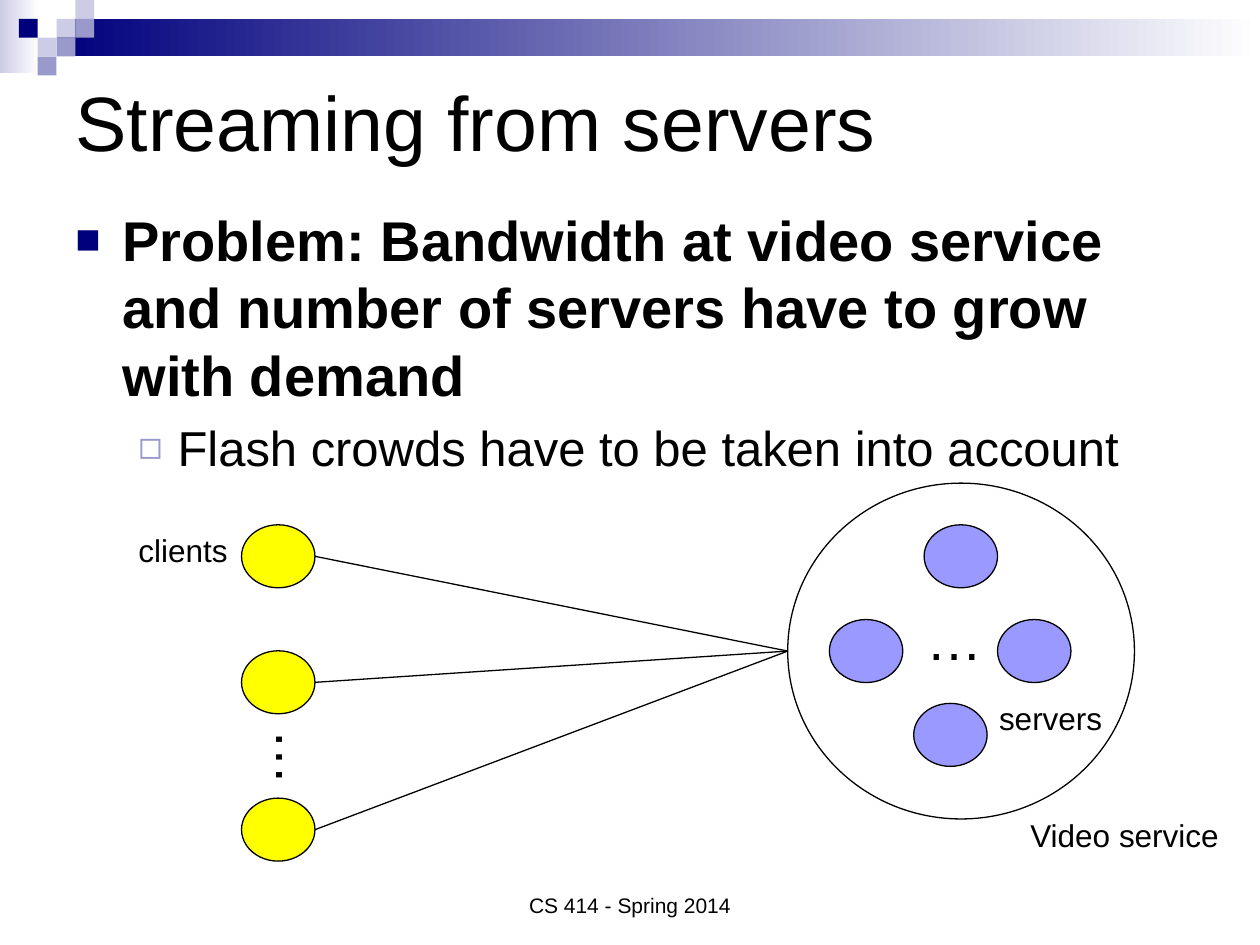
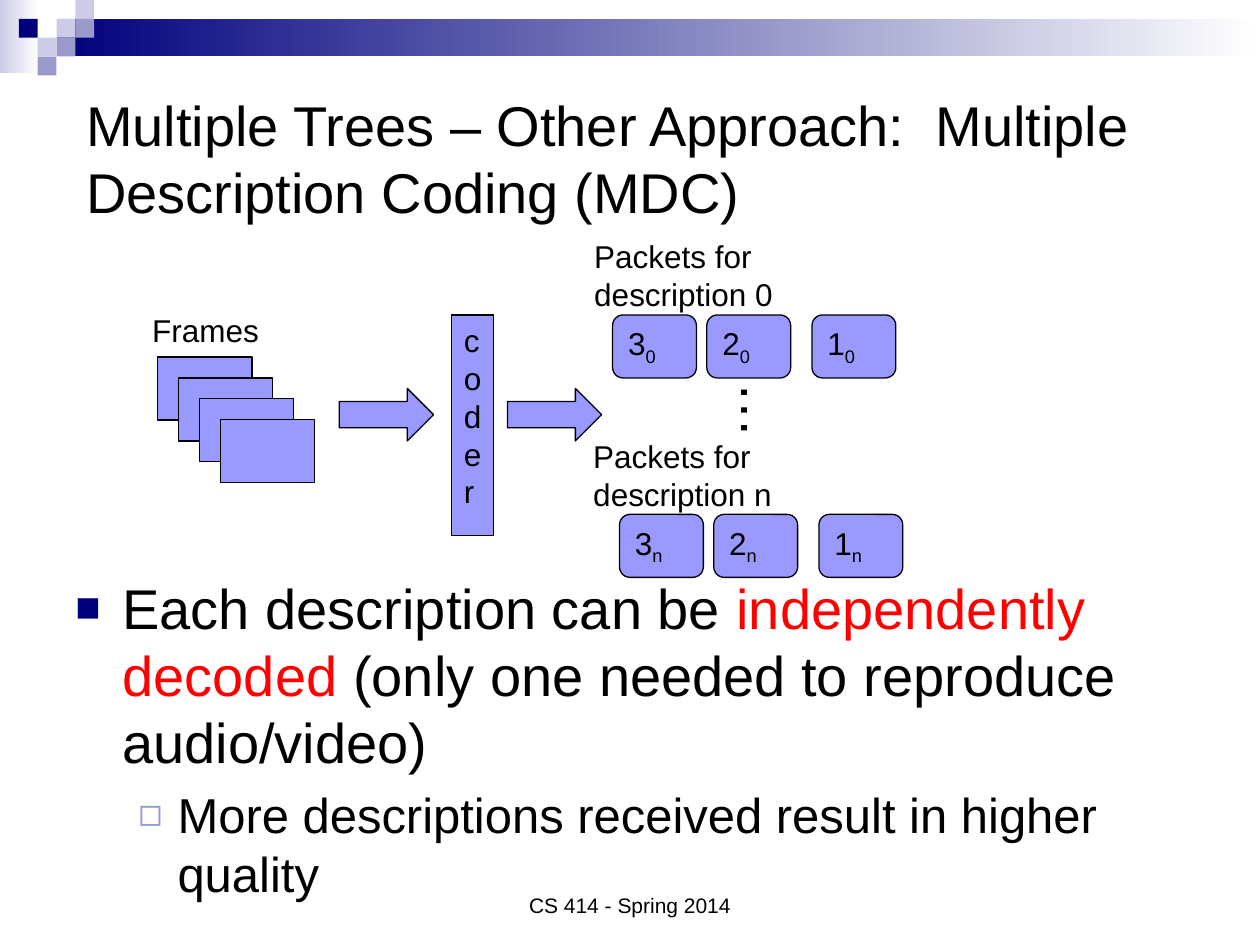
"""Build two lecture slides on video streaming and multiple description coding."""
from dataclasses import dataclass

from lxml import etree
from pptx import Presentation
from pptx.dml.color import RGBColor
from pptx.enum.shapes import MSO_CONNECTOR, MSO_SHAPE
from pptx.enum.text import MSO_ANCHOR, MSO_AUTO_SIZE, PP_ALIGN
from pptx.oxml.ns import qn
from pptx.util import Cm, Pt

RECT, ROUNDED = MSO_SHAPE.RECTANGLE, MSO_SHAPE.ROUNDED_RECTANGLE
OVAL, ARROW = MSO_SHAPE.OVAL, MSO_SHAPE.RIGHT_ARROW
STRAIGHT = MSO_CONNECTOR.STRAIGHT
TOP, MIDDLE, BOTTOM = MSO_ANCHOR.TOP, MSO_ANCHOR.MIDDLE, MSO_ANCHOR.BOTTOM
LEFT, CENTER = PP_ALIGN.LEFT, PP_ALIGN.CENTER
FIXED_SIZE = MSO_AUTO_SIZE.NONE

BLACK = RGBColor(0x00, 0x00, 0x00)
WHITE = RGBColor(0xFF, 0xFF, 0xFF)
RED = RGBColor(0xFF, 0x00, 0x00)
YELLOW = RGBColor(0xFF, 0xFF, 0x00)
NAVY = RGBColor(0x00, 0x00, 0x7D)
LAVENDER = RGBColor(0xCC, 0xCC, 0xE6)
VIOLET = RGBColor(0x99, 0x99, 0xCC)
PERIWINKLE = RGBColor(0x99, 0x99, 0xFF)

FONT = "Arial"
FOOTER = "CS 414 - Spring 2014"
TILE = 0.38
NODE_WIDTH, NODE_HEIGHT = 1.48, 1.27
LABEL_HEIGHT = 1.02


@dataclass(frozen=True)
class Box:
    """A rectangle in centimetres."""
    left: float
    top: float
    width: float
    height: float

    def lengths(self) -> tuple:
        """Return the four lengths for python-pptx."""
        return Cm(self.left), Cm(self.top), Cm(self.width), Cm(self.height)


@dataclass(frozen=True)
class Span:
    """A stretch of text with one format."""
    text: str
    color: RGBColor = BLACK
    bold: bool = False
    subscript: bool = False


@dataclass(frozen=True)
class BulletLevel:
    """The look of one outline level."""
    size: float
    margin: float
    hanging: float
    mark: str
    color: RGBColor
    percent: int
    space_before: float


@dataclass(frozen=True)
class Tile:
    """One square of the corner mosaic, by column and row."""
    column: int
    row: int
    color: RGBColor


@dataclass(frozen=True)
class PacketRow:
    """The packets that carry one description."""
    description: str
    left: float
    top: float
    label_left: float


PROBLEM_LEVEL = BulletLevel(32, 0.95, 0.95, "■", NAVY, 75, 0)
DETAIL_LEVEL = BulletLevel(28, 2.06, 0.79, "◻", VIOLET, 80, 5.6)
MOSAIC = (
    Tile(3, 1, LAVENDER), Tile(4, 0, LAVENDER), Tile(4, 1, VIOLET),
    Tile(2, 2, LAVENDER), Tile(1, 1, NAVY), Tile(3, 2, VIOLET),
    Tile(2, 3, VIOLET),
)
PACKET_ROWS = (
    PacketRow("0", 12.35, 6.35, 11.73),
    PacketRow("n", 12.49, 10.37, 11.71),
)
PACKET_OFFSETS = {"3": 0, "2": 1.9, "1": 4.02}
SERVER_CORNERS = ((18.63, 10.58), (20.11, 12.49), (18.42, 14.18), (16.72, 12.49))
CLIENT_LEFT, CLIENT_TOPS = 4.87, (10.58, 13.12, 16.09)
SERVICE = Box(15.88, 9.74, 6.99, 6.77)


def write_spans(paragraph, spans: tuple[Span, ...], size: float) -> None:
    """Fill a paragraph with formatted runs."""
    for span in spans:
        run = paragraph.add_run()
        run.text = span.text
        run.font.name, run.font.size = FONT, Pt(size)
        run.font.bold = span.bold
        run.font.color.rgb = span.color
        if span.subscript:
            run._r.get_or_add_rPr().set("baseline", "-25000")


def add_block(slide, kind, box: Box, color: RGBColor | None = None,
              outlined: bool = True, spans: tuple[Span, ...] = ()):
    """Draw a preset shape, with text at its upper left if any."""
    block = slide.shapes.add_shape(kind, *box.lengths())
    block.shadow.inherit = False
    if color is None:
        block.fill.background()
    else:
        block.fill.solid()
        block.fill.fore_color.rgb = color
    if outlined:
        block.line.color.rgb = BLACK
        block.line.width = Pt(0.75)
    else:
        block.line.fill.background()
    if spans:
        block.text_frame.vertical_anchor = TOP
        paragraph = block.text_frame.paragraphs[0]
        paragraph.alignment = LEFT
        write_spans(paragraph, spans, 18)
    return block


def add_fade(slide, box: Box, start: RGBColor) -> None:
    """Draw a band that fades to white towards the right."""
    band = add_block(slide, RECT, box, WHITE, outlined=False)
    band.fill.gradient()
    band.fill.gradient_angle = 0
    for stop, color, position in zip(band.fill.gradient_stops, (start, WHITE), (0, 1)):
        stop.color.rgb = color
        stop.position = position


def add_label(slide, box: Box, text: str, size: float = 18, wrap: bool = True,
              rotation: float = 0, anchor=TOP, alignment=LEFT) -> None:
    """Place a plain line of text."""
    label = slide.shapes.add_textbox(*box.lengths())
    label.rotation = rotation
    frame = label.text_frame
    frame.word_wrap = wrap
    frame.vertical_anchor = anchor
    frame.paragraphs[0].alignment = alignment
    write_spans(frame.paragraphs[0], (Span(text),), size)


def add_dots(slide, left: float, top: float, rotation: float = 0) -> None:
    """Place an ellipsis that stands for further items."""
    add_label(slide, Box(left, top, 1.48, 1.63), "…", 32, rotation=rotation)


def add_link(slide, start: tuple[float, float], end: tuple[float, float]) -> None:
    """Draw a thin straight line between two points."""
    link = slide.shapes.add_connector(STRAIGHT, *map(Cm, start + end))
    link.line.color.rgb = BLACK
    link.line.width = Pt(0.75)
    etree.SubElement(link._element.spPr, qn("a:effectLst"))


def set_bullet(paragraph, level: BulletLevel) -> None:
    """Give a paragraph its indent and bullet."""
    properties = paragraph._p.get_or_add_pPr()
    properties.set("marL", str(Cm(level.margin)))
    properties.set("indent", str(-Cm(level.hanging)))
    color = etree.SubElement(properties, qn("a:buClr"))
    etree.SubElement(color, qn("a:srgbClr"), val=str(level.color))
    etree.SubElement(properties, qn("a:buSzPct"), val=str(level.percent * 1000))
    etree.SubElement(properties, qn("a:buFont"), typeface=FONT)
    etree.SubElement(properties, qn("a:buChar"), char=level.mark)


def add_outline(slide, box: Box, problem: tuple[Span, ...], detail: str) -> None:
    """Write a main point with one detail below it."""
    frame = slide.shapes.add_textbox(*box.lengths()).text_frame
    frame.word_wrap = True
    points = (
        (frame.paragraphs[0], PROBLEM_LEVEL, problem),
        (frame.add_paragraph(), DETAIL_LEVEL, (Span(detail),)),
    )
    for paragraph, level, spans in points:
        set_bullet(paragraph, level)
        paragraph.space_before = Pt(level.space_before)
        write_spans(paragraph, spans, level.size)


def add_titled_slide(deck, title: str, box: Box, size: float):
    """Add a slide with the shared band, mosaic, title and footer."""
    slide = deck.slides.add_slide(deck.slide_layouts[5])
    add_fade(slide, Box(0, 0, 0.79, 1.47), LAVENDER)
    add_fade(slide, Box(3 * TILE, TILE, 25.4 - 3 * TILE, 2 * TILE), NAVY)
    for tile in MOSAIC:
        corner = Box(tile.column * TILE, tile.row * TILE, TILE, TILE)
        add_block(slide, RECT, corner, tile.color, outlined=False)
    heading = slide.shapes.title
    heading.left, heading.top, heading.width, heading.height = box.lengths()
    frame = heading.text_frame
    frame.auto_size = FIXED_SIZE
    frame.word_wrap = True
    frame.vertical_anchor = MIDDLE
    frame.paragraphs[0].alignment = LEFT
    write_spans(frame.paragraphs[0], (Span(title),), size)
    add_label(slide, Box(8.68, 17.36, 8.04, 1.27), FOOTER, 12,
              anchor=BOTTOM, alignment=CENTER)
    return slide


def build_streaming(deck) -> None:
    """Show clients that all load one video service."""
    slide = add_titled_slide(deck, "Streaming from servers",
                             Box(1.27, 1.27, 22.86, 2.33), 44)
    problem = Span("Problem: Bandwidth at video service and number of servers "
                   "have to grow with demand", bold=True)
    add_outline(slide, Box(1.27, 4.02, 22.86, 10.8), (problem,),
                "Flash crowds have to be taken into account")
    add_block(slide, OVAL, SERVICE)
    for left, top in SERVER_CORNERS:
        add_block(slide, OVAL, Box(left, top, NODE_WIDTH, NODE_HEIGHT), PERIWINKLE)
    entrance = (SERVICE.left, SERVICE.top + SERVICE.height / 2)
    for top in CLIENT_TOPS:
        add_block(slide, OVAL, Box(CLIENT_LEFT, top, NODE_WIDTH, NODE_HEIGHT), YELLOW)
        add_link(slide, (CLIENT_LEFT + NODE_WIDTH, top + NODE_HEIGHT / 2), entrance)
    add_dots(slide, 4.52, 14.53, rotation=270)
    add_dots(slide, 18.42, 12.07)
    for text, left, top, width in (("clients", 2.54, 10.58, 2.34),
                                   ("Video service", 20.52, 16.33, 4.34),
                                   ("servers", 19.89, 13.97, 2.62)):
        add_label(slide, Box(left, top, width, LABEL_HEIGHT), text, wrap=False)


def build_coding(deck) -> None:
    """Show frames coded into independent descriptions."""
    slide = add_titled_slide(
        deck, "Multiple Trees – Other Approach:  Multiple Description Coding (MDC)",
        Box(1.48, 1.27, 22.86, 3.81), 32)
    problem = (Span("Each description can be "),
               Span("independently decoded ", RED),
               Span("(only one needed to reproduce audio/video)"))
    add_outline(slide, Box(1.27, 11.43, 22.86, 7.62), problem,
                "More descriptions received result in higher quality")
    add_block(slide, RECT, Box(9.1, 6.35, 0.85, 4.45), PERIWINKLE,
              spans=(Span("coder"),))
    add_label(slide, Box(2.82, 6.14, 2.69, LABEL_HEIGHT), "Frames", wrap=False)
    for step in range(4):
        shift = step * 0.42
        add_block(slide, RECT, Box(3.18 + shift, 7.2 + shift, 1.9, 1.27), PERIWINKLE)
    for left in (6.84, 10.23):
        add_block(slide, ARROW, Box(left, 7.83, 1.9, 1.06), PERIWINKLE)
    for row in PACKET_ROWS:
        for number, offset in PACKET_OFFSETS.items():
            add_block(slide, ROUNDED, Box(row.left + offset, row.top, 1.69, 1.27),
                      PERIWINKLE,
                      spans=(Span(number), Span(row.description, subscript=True)))
        add_label(slide, Box(row.label_left, row.top - 1.69, 5.84, 1.8),
                  f"Packets for description {row.description}")
    add_dots(slide, 13.9, 7.54, rotation=270)


def main() -> None:
    """Build the deck and save it."""
    deck = Presentation()
    deck.slide_width, deck.slide_height = Cm(25.4), Cm(19.05)
    build_streaming(deck)
    build_coding(deck)
    deck.save("out.pptx")


if __name__ == "__main__":
    main()
